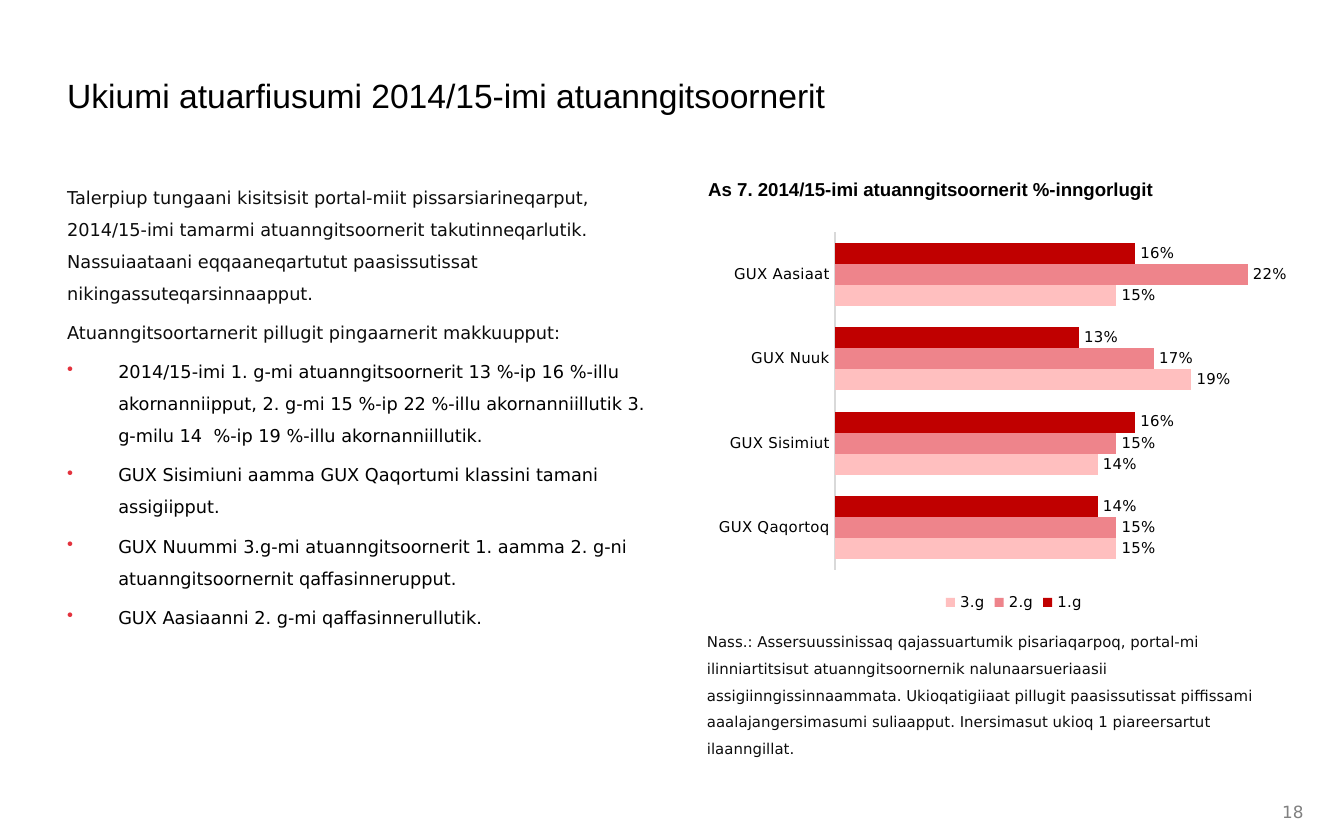
from lxml.etree import SubElement
from pptx import Presentation
from pptx.chart.data import CategoryChartData
from pptx.dml.color import RGBColor
from pptx.enum.chart import XL_CHART_TYPE, XL_LABEL_POSITION, XL_LEGEND_POSITION, XL_TICK_MARK
from pptx.enum.text import MSO_ANCHOR
from pptx.oxml import parse_xml
from pptx.oxml.ns import nsdecls, qn
from pptx.util import Inches, Pt

BLACK = RGBColor(0x00, 0x00, 0x00)
INK = RGBColor(0x0D, 0x0D, 0x0D)
GREY = RGBColor(0x80, 0x80, 0x80)
AXIS_GREY = RGBColor(0xD9, 0xD9, 0xD9)
DARK_RED = RGBColor(0xC0, 0x00, 0x00)
ROSE = RGBColor(0xEE, 0x84, 0x8B)
PINK = RGBColor(0xFF, 0xBF, 0xBF)
BULLET_RED = RGBColor(0xE3, 0x32, 0x3D)

HEADING_FONT = "Arial"
BODY_FONT = "DejaVu Sans"

INTRODUCTION = [
    "Talerpiup tungaani kisitsisit portal-miit pissarsiarineqarput, 2014/15-imi tamarmi "
    "atuanngitsoornerit takutinneqarlutik. Nassuiaataani eqqaaneqartutut paasissutissat "
    "nikingassuteqarsinnaapput.",
    "Atuanngitsoortarnerit pillugit pingaarnerit makkuupput:",
]
FINDINGS = [
    "2014/15-imi 1. g-mi atuanngitsoornerit 13 %-ip 16 %-illu akornanniipput, 2. g-mi 15 %-ip "
    "22 %-illu akornanniillutik 3. g-milu 14  %-ip 19 %-illu akornanniillutik.",
    "GUX Sisimiuni aamma GUX Qaqortumi klassini tamani assigiipput.",
    "GUX Nuummi 3.g-mi atuanngitsoornerit 1. aamma 2. g-ni atuanngitsoornernit qaffasinnerupput.",
    "GUX Aasiaanni 2. g-mi qaffasinnerullutik.",
]
NOTE = (
    "Nass.: Assersuussinissaq qajassuartumik pisariaqarpoq, portal-mi ilinniartitsisut "
    "atuanngitsoornernik nalunaarsueriaasii assigiinngissinnaammata. Ukioqatigiiaat pillugit "
    "paasissutissat piffissami aaalajangersimasumi suliaapput. Inersimasut ukioq 1 "
    "piareersartut ilaanngillat."
)
SCHOOLS = ["GUX Aasiaat", "GUX Nuuk", "GUX Sisimiut", "GUX Qaqortoq"]
ABSENCE = [
    ("1.g", [0.16, 0.13, 0.16, 0.14], DARK_RED),
    ("2.g", [0.22, 0.17, 0.15, 0.15], ROSE),
    ("3.g", [0.15, 0.19, 0.14, 0.15], PINK),
]


class SlideBuilder:
    def __init__(self, slide):
        self.slide = slide

    def style_font(self, font, size, color=BLACK, name=BODY_FONT, bold=False):
        font.size = Pt(size)
        font.name = name
        font.bold = bold
        font.color.rgb = color

    def text_box(self, left, top, width, height, anchor=MSO_ANCHOR.TOP):
        shape = self.slide.shapes.add_textbox(
            Inches(left), Inches(top), Inches(width), Inches(height))
        frame = shape.text_frame
        frame.word_wrap = True
        frame.vertical_anchor = anchor
        frame.margin_left = frame.margin_right = frame.margin_top = frame.margin_bottom = 0
        return frame

    def paragraph(self, frame, text, size, color=BLACK, name=BODY_FONT, bold=False,
                  line_spacing=1.0, bullet=False):
        """Fill the empty first paragraph, or append one spaced from the last."""
        paragraph = frame.paragraphs[0]
        if paragraph.runs:
            paragraph = frame.add_paragraph()
            paragraph.space_before = Pt(4)
        paragraph.line_spacing = line_spacing
        if bullet:
            self.add_bullet(paragraph)
        run = paragraph.add_run()
        run.text = text
        self.style_font(run.font, size, color, name, bold)

    def add_bullet(self, paragraph):
        properties = paragraph._p.get_or_add_pPr()
        properties.set("marL", str(Inches(0.38)))
        properties.set("indent", str(-Inches(0.38)))
        color = SubElement(properties, qn("a:buClr"))
        SubElement(color, qn("a:srgbClr"), val=str(BULLET_RED))
        SubElement(properties, qn("a:buChar"), char="•")

    def bar_chart(self, left, top, width, height, categories, series_rows):
        chart_data = CategoryChartData(number_format="0%")
        chart_data.categories = categories
        for name, values, _ in series_rows:
            chart_data.add_series(name, values)
        chart = self.slide.shapes.add_chart(
            XL_CHART_TYPE.BAR_CLUSTERED, Inches(left), Inches(top),
            Inches(width), Inches(height), chart_data).chart
        chart.has_title = False
        self.style_font(chart.font, 8)

        chart.has_legend = True
        chart.legend.position = XL_LEGEND_POSITION.BOTTOM
        chart.legend.include_in_layout = False
        self.style_font(chart.legend.font, 8)

        category_axis = chart.category_axis
        category_axis.reverse_order = True
        category_axis.major_tick_mark = XL_TICK_MARK.NONE
        category_axis.format.line.color.rgb = AXIS_GREY
        category_axis.format.line.width = Pt(0.75)
        self.style_font(category_axis.tick_labels.font, 8)

        value_axis = chart.value_axis
        value_axis.minimum_scale = 0
        value_axis.maximum_scale = 0.25
        value_axis.has_major_gridlines = False
        value_axis.visible = False

        plot = chart.plots[0]
        plot.gap_width = 100
        plot.overlap = 0
        plot.vary_by_categories = False
        for series, (_, _, color) in zip(plot.series, series_rows):
            series.format.fill.solid()
            series.format.fill.fore_color.rgb = color
            series.invert_if_negative = False
            labels = series.data_labels
            labels.show_value = True
            labels.number_format = "0%"
            labels.number_format_is_linked = False
            labels.position = XL_LABEL_POSITION.OUTSIDE_END
            self.style_font(labels.font, 8)
        self.place_plot(chart, x=0.21, y=0.02, w=0.76, h=0.86)

    def place_plot(self, chart, **fractions):
        """Fix the inner plot area as fractions of the chart."""
        plot_area = chart._chartSpace.chart.plotArea
        for layout in plot_area.findall(qn("c:layout")):
            plot_area.remove(layout)
        sizes = "".join(f'<c:{key} val="{value}"/>' for key, value in fractions.items())
        plot_area.insert(0, parse_xml(
            f'<c:layout {nsdecls("c")}><c:manualLayout><c:layoutTarget val="inner"/>'
            f'<c:xMode val="edge"/><c:yMode val="edge"/>{sizes}</c:manualLayout></c:layout>'))


def main():
    presentation = Presentation()
    presentation.slide_width = Inches(10)
    presentation.slide_height = Inches(6.25)
    builder = SlideBuilder(presentation.slides.add_slide(presentation.slide_layouts[6]))

    title = builder.text_box(0.5, 0.56, 9, 0.59)
    builder.paragraph(title, "Ukiumi atuarfiusumi 2014/15-imi atuanngitsoornerit", 18,
                      name=HEADING_FONT)

    body = builder.text_box(0.5, 1.31, 4.41, 4.56)
    for text in INTRODUCTION:
        builder.paragraph(body, text, 9.5, INK, line_spacing=1.5)
    for text in FINDINGS:
        builder.paragraph(body, text, 9.5, line_spacing=1.5, bullet=True)

    chart_title = builder.text_box(5.27, 1.3, 4.4, 0.18)
    builder.paragraph(chart_title, "As 7. 2014/15-imi atuanngitsoornerit %-inngorlugit", 10,
                      name=HEADING_FONT, bold=True, line_spacing=1.14)
    builder.bar_chart(5.25, 1.67, 4.59, 2.92, SCHOOLS, ABSENCE)

    note = builder.text_box(5.26, 4.64, 4.41, 0.83)
    builder.paragraph(note, NOTE, 8, INK, line_spacing=1.5)

    page_number = builder.text_box(9.54, 5.98, 0.25, 0.09, MSO_ANCHOR.MIDDLE)
    builder.paragraph(page_number, "18", 9, GREY, line_spacing=1.2)

    presentation.save("out.pptx")


if __name__ == "__main__":
    main()
